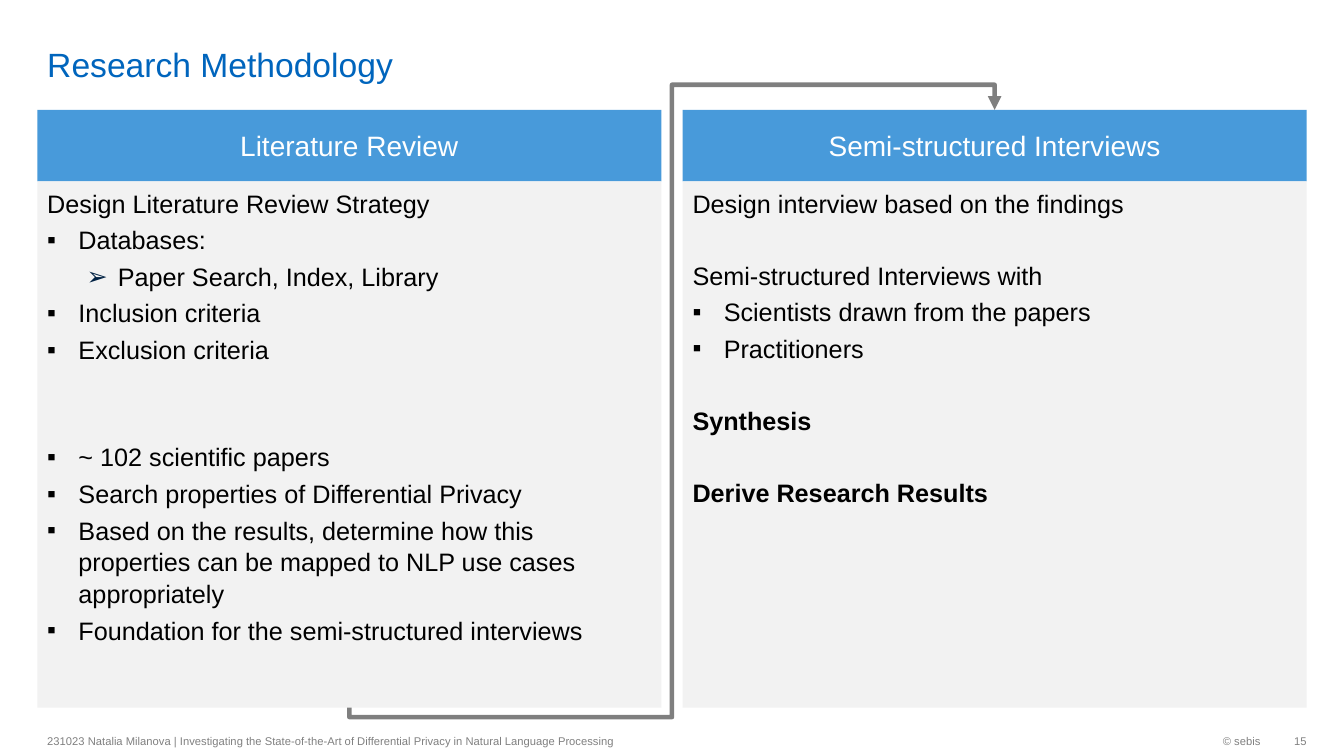
from dataclasses import dataclass

from lxml import etree
from pptx import Presentation
from pptx.dml.color import RGBColor
from pptx.enum.shapes import MSO_CONNECTOR, MSO_SHAPE
from pptx.enum.text import MSO_ANCHOR, PP_ALIGN
from pptx.oxml.ns import qn
from pptx.util import Inches, Pt

ELBOW = MSO_CONNECTOR.ELBOW
RECTANGLE = MSO_SHAPE.RECTANGLE
TOP, MIDDLE, BOTTOM = MSO_ANCHOR.TOP, MSO_ANCHOR.MIDDLE, MSO_ANCHOR.BOTTOM
LEFT, CENTER, RIGHT = PP_ALIGN.LEFT, PP_ALIGN.CENTER, PP_ALIGN.RIGHT
BOTTOM_SITE, TOP_SITE = 2, 0


@dataclass(frozen=True)
class Theme:
    font: str = "Arial"
    title: str = "0065BD"
    header: str = "489ADA"
    header_text: str = "FFFFFF"
    panel: str = "F2F2F2"
    text: str = "000000"
    arrow_bullet: str = "002143"
    footer: str = "808080"
    arrow: str = "000000"
    title_size: float = 24
    header_size: float = 20
    body_size: float = 18
    footer_size: float = 8
    line_spacing: float = 1.05
    space_before: float = 3.5
    line_pitch: float = 25.2


@dataclass(frozen=True)
class Item:
    """A body line; level 0 has no bullet, gap counts the lines left free above."""
    text: str
    level: int = 0
    gap: int = 0
    bold: bool = False


THEME = Theme()
# level: (left margin, bullet character, bullet colour)
BULLETS = {1: (0.31, "▪", THEME.text), 2: (0.7, "➢", THEME.arrow_bullet)}
HANGING = 0.31

REVIEW = [
    Item("Design Literature Review Strategy"),
    Item("Databases:", 1),
    Item("Paper Search, Index, Library", 2),
    Item("Inclusion criteria", 1),
    Item("Exclusion criteria", 1),
    Item("~ 102 scientific papers", 1, gap=2),
    Item("Search properties of Differential Privacy", 1),
    Item("Based on the results, determine how this properties can be mapped "
         "to NLP use cases appropriately", 1),
    Item("Foundation for the semi-structured interviews", 1),
]
INTERVIEWS = [
    Item("Design interview based on the findings"),
    Item("Semi-structured Interviews with", gap=1),
    Item("Scientists drawn from the papers", 1),
    Item("Practitioners", 1),
    Item("Synthesis", gap=1, bold=True),
    Item("Derive Research Results", gap=1, bold=True),
]


def write(paragraph, text, *, size, color, bold=False, align=LEFT):
    paragraph.text = text
    paragraph.alignment = align
    font = paragraph.font
    font.name, font.size, font.bold = THEME.font, Pt(size), bold
    font.color.rgb = RGBColor.from_string(color)


def set_frame(shape, anchor, insets=(0.1, 0.05, 0.1, 0.05)):
    frame = shape.text_frame
    frame.word_wrap = True
    frame.vertical_anchor = anchor
    (frame.margin_left, frame.margin_top,
     frame.margin_right, frame.margin_bottom) = map(Inches, insets)
    return frame


def add_label(slide, box, text, *, anchor=MIDDLE, insets=(0.1, 0.05, 0.1, 0.05), **style):
    shape = slide.shapes.add_textbox(*map(Inches, box))
    write(set_frame(shape, anchor, insets).paragraphs[0], text, **style)


def add_panel(slide, box, fill):
    shape = slide.shapes.add_shape(RECTANGLE, *map(Inches, box))
    shape.shadow.inherit = False
    shape.fill.solid()
    shape.fill.fore_color.rgb = RGBColor.from_string(fill)
    shape.line.fill.background()
    return shape


def add_bullet(paragraph, level):
    margin, character, color = BULLETS[level]
    properties = paragraph._p.get_or_add_pPr()
    properties.set("marL", str(Inches(margin)))
    properties.set("indent", str(-Inches(HANGING)))
    bullet_color = etree.SubElement(properties, qn("a:buClr"))
    etree.SubElement(bullet_color, qn("a:srgbClr"), val=color)
    etree.SubElement(properties, qn("a:buFont"), typeface=THEME.font)
    etree.SubElement(properties, qn("a:buChar"), char=character)


def add_column(slide, box, heading, items):
    """Place a heading bar over a text panel and return both shapes."""
    left, top, width, height = box
    header_height = 0.71
    header = add_panel(slide, (left, top, width, header_height), THEME.header)
    write(set_frame(header, MIDDLE).paragraphs[0], heading,
          size=THEME.header_size, color=THEME.header_text, align=CENTER)
    body = add_panel(slide, (left, top + header_height, width, height - header_height),
                     THEME.panel)
    frame = set_frame(body, TOP)
    for index, item in enumerate(items):
        paragraph = frame.add_paragraph() if index else frame.paragraphs[0]
        if item.level:
            add_bullet(paragraph, item.level)
        paragraph.line_spacing = THEME.line_spacing
        if index:
            paragraph.space_before = Pt(THEME.space_before + item.gap * THEME.line_pitch)
        write(paragraph, item.text, size=THEME.body_size, color=THEME.text, bold=item.bold)
    return header, body


def add_flow_arrow(slide, source, target):
    """Lead from the bottom of source, between the columns, to the top of target."""
    connector = slide.shapes.add_connector(ELBOW, 0, 0, 0, 0)
    connector.begin_connect(source, BOTTOM_SITE)
    connector.end_connect(target, TOP_SITE)
    start_x, end_x = (shape.left + shape.width // 2 for shape in (source, target))
    start_y, end_y = source.top + source.height, target.top
    rise, run = start_y - end_y, end_x - start_x
    connector.left = (start_x + end_x - rise) // 2
    connector.top = (start_y + end_y - run) // 2
    connector.width, connector.height = rise, run

    properties = connector._element.spPr
    transform = properties.find(qn("a:xfrm"))
    for name, value in (("rot", "5400000"), ("flipH", "1"), ("flipV", "1")):
        transform.set(name, value)
    geometry = properties.find(qn("a:prstGeom"))
    geometry.set("prst", "bentConnector5")
    guides = geometry.find(qn("a:avLst"))
    if guides is None:
        guides = etree.SubElement(geometry, qn("a:avLst"))
    for index, share in enumerate((-0.016, 0.5, 1.042), start=1):
        etree.SubElement(guides, qn("a:gd"), name=f"adj{index}",
                         fmla=f"val {round(share * 100000)}")

    connector.line.width = Pt(3.25)
    connector.line.color.rgb = RGBColor.from_string(THEME.arrow)
    line = properties.find(qn("a:ln"))
    etree.SubElement(line.find(".//" + qn("a:srgbClr")), qn("a:alpha"), val="50000")
    etree.SubElement(line, qn("a:tailEnd"), type="triangle")
    etree.SubElement(properties, qn("a:effectLst"))


def add_footer(slide, box):
    left, top, width, height = box
    number_width, credit_width = 0.36, 2.34
    number_left = left + width - number_width
    style = {"size": THEME.footer_size, "color": THEME.footer}
    add_label(slide, (number_left - credit_width, top, credit_width, height),
              "© sebis", align=RIGHT, **style)
    add_label(slide, (left, top, 6.3, height),
              "231023 Natalia Milanova | Investigating the State-of-the-Art of "
              "Differential Privacy in Natural Language Processing", **style)
    add_label(slide, (number_left, top, number_width, height), "15",
              insets=(0.1, 0.05, 0, 0.05), align=RIGHT, **style)


def build_methodology_slide(presentation):
    slide = presentation.slides.add_slide(presentation.slide_layouts[6])
    left, top, width, height, gap = 0.37, 1.09, 12.59, 5.93, 0.21
    column_width = (width - gap) / 2
    _, review_body = add_column(slide, (left, top, column_width, height),
                                "Literature Review", REVIEW)
    interview_header, _ = add_column(
        slide, (left + column_width + gap, top, column_width, height),
        "Semi-structured Interviews", INTERVIEWS)
    add_label(slide, (left, 0.05, 11.58, 0.79), "Research Methodology", anchor=BOTTOM,
              insets=(0.1, 0, 0.1, 0), size=THEME.title_size, color=THEME.title)
    add_footer(slide, (left, 7.19, width, 0.32))
    add_flow_arrow(slide, review_body, interview_header)


def main():
    presentation = Presentation()
    presentation.slide_width, presentation.slide_height = Inches(13.33), Inches(7.5)
    build_methodology_slide(presentation)
    presentation.save("out.pptx")


if __name__ == "__main__":
    main()
